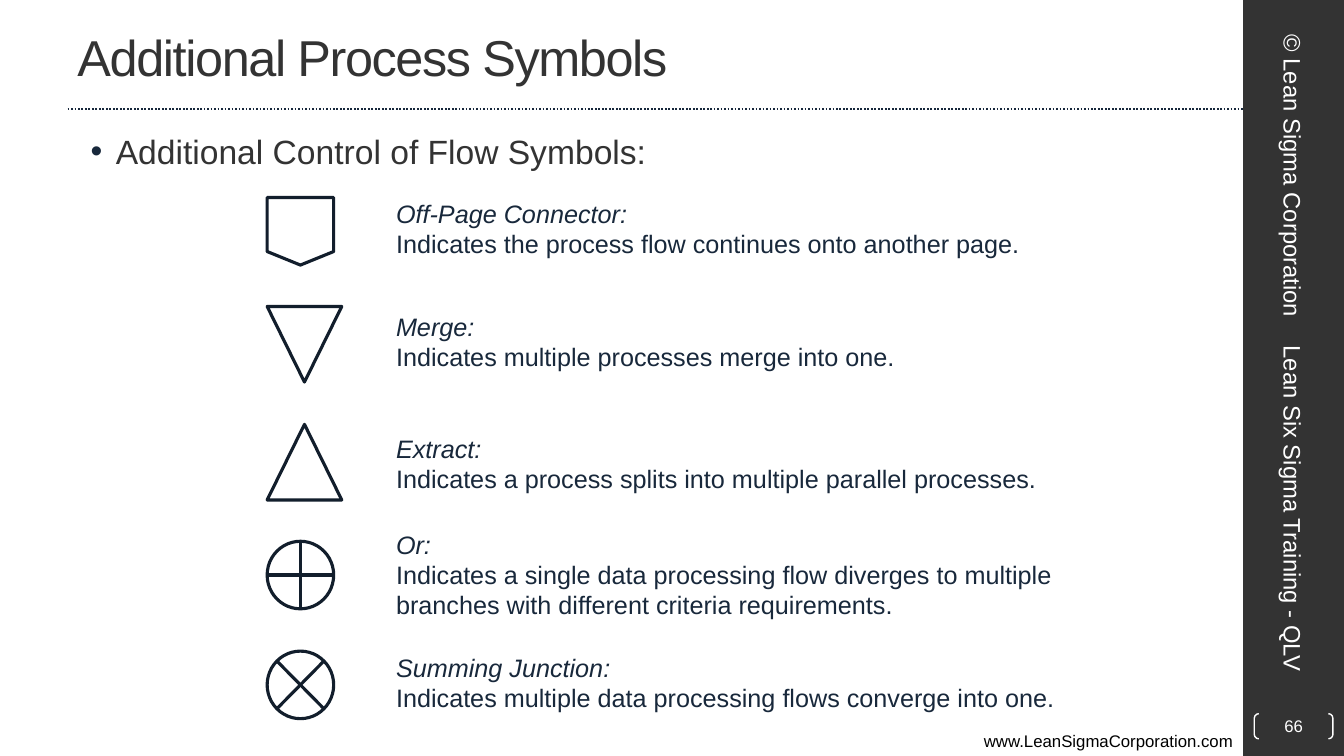
import dataclasses

import pptx
import pptx.dml.color
import pptx.enum.dml
import pptx.enum.shapes
import pptx.enum.text
import pptx.oxml
import pptx.oxml.ns
import pptx.util
from pptx.util import Inches

SHAPE = pptx.enum.shapes.MSO_SHAPE
ALIGN = pptx.enum.text.PP_ALIGN
ANCHOR = pptx.enum.text.MSO_ANCHOR


@dataclasses.dataclass(frozen=True)
class Theme:
    font: str = "Arial"
    charcoal: str = "333333"
    rule: str = "17273B"
    navy: str = "18283B"
    outline: str = "121E2C"
    white: str = "FFFFFF"
    black: str = "000000"
    title: float = 36
    heading: float = 24
    description: float = 18
    sidebar: float = 17
    small: float = 12


THEME = Theme()

SYMBOLS = [
    (SHAPE.FLOWCHART_OFFPAGE_CONNECTOR, 1.96, 0.66, 0.67, 1.92, 0.71,
     "Off-Page Connector:", "Indicates the process flow continues onto another page."),
    (SHAPE.FLOWCHART_MERGE, 3.04, 0.74, 0.75, 3.04, 0.71,
     "Merge:", "Indicates multiple processes merge into one."),
    (SHAPE.FLOWCHART_EXTRACT, 4.21, 0.74, 0.75, 4.25, 0.71,
     "Extract:", "Indicates a process splits into multiple parallel processes."),
    (SHAPE.FLOWCHART_OR, 5.37, 0.66, 0.67, 5.2, 1.01,
     "Or:", "Indicates a single data processing flow diverges to multiple "
     "branches with different criteria requirements."),
    (SHAPE.FLOWCHART_SUMMING_JUNCTION, 6.46, 0.66, 0.67, 6.42, 0.71,
     "Summing Junction:", "Indicates multiple data processing flows converge into one."),
]


def rgb(color):
    return pptx.dml.color.RGBColor.from_string(color)


def style_paragraph(paragraph, size, color, align=ALIGN.LEFT, italic=False):
    paragraph.alignment = align
    font = paragraph.font
    font.name = THEME.font
    font.size = pptx.util.Pt(size)
    font.color.rgb = rgb(color)
    font.italic = italic


def add_text(slide, box, lines, size, color, align=ALIGN.LEFT,
             anchor=ANCHOR.TOP, rotation=0, italic_first=False):
    shape = slide.shapes.add_textbox(*map(Inches, box))
    shape.rotation = rotation
    frame = shape.text_frame
    frame.word_wrap = True
    frame.vertical_anchor = anchor
    frame.text = "\n".join(lines)
    for index, paragraph in enumerate(frame.paragraphs):
        style_paragraph(paragraph, size, color, align, italic_first and index == 0)
    return frame


def add_shape(slide, kind, box, fill=None, line=None, width=1):
    shape = slide.shapes.add_shape(kind, *map(Inches, box))
    shape.shadow.inherit = False
    if fill:
        shape.fill.solid()
        shape.fill.fore_color.rgb = rgb(fill)
    else:
        shape.fill.background()
    if line:
        shape.line.color.rgb = rgb(line)
        shape.line.width = pptx.util.Pt(width)
    else:
        shape.line.fill.background()
    return shape


def add_dotted_rule(slide, left, right, top):
    rule = slide.shapes.add_connector(
        pptx.enum.shapes.MSO_CONNECTOR.STRAIGHT,
        Inches(left), Inches(top), Inches(right), Inches(top))
    rule.line.color.rgb = rgb(THEME.rule)
    rule.line.width = pptx.util.Pt(1.25)
    rule.line.dash_style = pptx.enum.dml.MSO_LINE.ROUND_DOT
    properties = rule._element.spPr
    properties.append(pptx.oxml.parse_xml(
        f"<a:effectLst {pptx.oxml.ns.nsdecls('a')}/>"))


def add_title(slide, text):
    frame = add_text(slide, (0.67, 0.03, 11.11, 1.05), [text], THEME.title,
                     THEME.charcoal, anchor=ANCHOR.MIDDLE)
    frame.paragraphs[0].runs[0].font._element.set("spc", "-100")


def add_bullet(slide, text):
    frame = add_text(slide, (0.67, 1.25, 11.11, 6), [text], THEME.heading, THEME.charcoal)
    properties = frame.paragraphs[0]._p.get_or_add_pPr()
    properties.set("marL", str(Inches(0.38)))
    properties.set("indent", str(Inches(-0.25)))
    namespace = pptx.oxml.ns.nsdecls("a")
    bullet = [
        f'<a:buClr {namespace}><a:srgbClr val="{THEME.navy}"/></a:buClr>',
        f'<a:buFont {namespace} typeface="{THEME.font}"/>',
        f'<a:buChar {namespace} char="•"/>',
    ]
    for index, element in enumerate(bullet):
        properties.insert(index, pptx.oxml.parse_xml(element))


def add_page_number(slide, number):
    bracket = add_shape(slide, SHAPE.DOUBLE_BRACKET, (12.44, 7.08, 0.78, 0.25),
                        line=THEME.white)
    bracket.adjustments[0] = 0.18
    frame = bracket.text_frame
    frame.margin_left = frame.margin_right = frame.margin_top = frame.margin_bottom = 0
    frame.vertical_anchor = ANCHOR.MIDDLE
    frame.text = number
    style_paragraph(frame.paragraphs[0], THEME.small, THEME.white, ALIGN.CENTER)


def add_sidebar(slide):
    add_shape(slide, SHAPE.RECTANGLE, (12.33, 0, 1, 7.5), fill=THEME.charcoal)
    add_page_number(slide, "66")
    for box, text, align in [
        ((11.24, 1.48, 3.17, 0.53), "© Lean Sigma Corporation", ALIGN.CENTER),
        ((10.99, 4.9, 3.67, 0.53), "Lean Six Sigma Training - QLV", ALIGN.LEFT),
    ]:
        add_text(slide, box, [text], THEME.sidebar, THEME.white, align,
                 ANCHOR.MIDDLE, rotation=90)


def add_symbol(slide, kind, top, width, height, text_top, text_height, name, meaning):
    add_shape(slide, kind, (2.65, top, width, height), line=THEME.outline, width=2.25)
    add_text(slide, (3.83, text_top, 7, text_height), [name, meaning],
             THEME.description, THEME.navy, italic_first=True)


def main():
    presentation = pptx.Presentation()
    presentation.slide_width = Inches(13.33)
    presentation.slide_height = Inches(7.5)
    slide = presentation.slides.add_slide(presentation.slide_layouts[6])
    add_sidebar(slide)
    add_dotted_rule(slide, 0.67, 12.33, 1.08)
    add_text(slide, (0, 7.2, 12.33, 0.3), ["www.LeanSigmaCorporation.com"],
             THEME.small, THEME.black, ALIGN.RIGHT)
    add_title(slide, "Additional Process Symbols")
    add_bullet(slide, "Additional Control of Flow Symbols:")
    for symbol in SYMBOLS:
        add_symbol(slide, *symbol)
    presentation.save("out.pptx")


if __name__ == "__main__":
    main()
